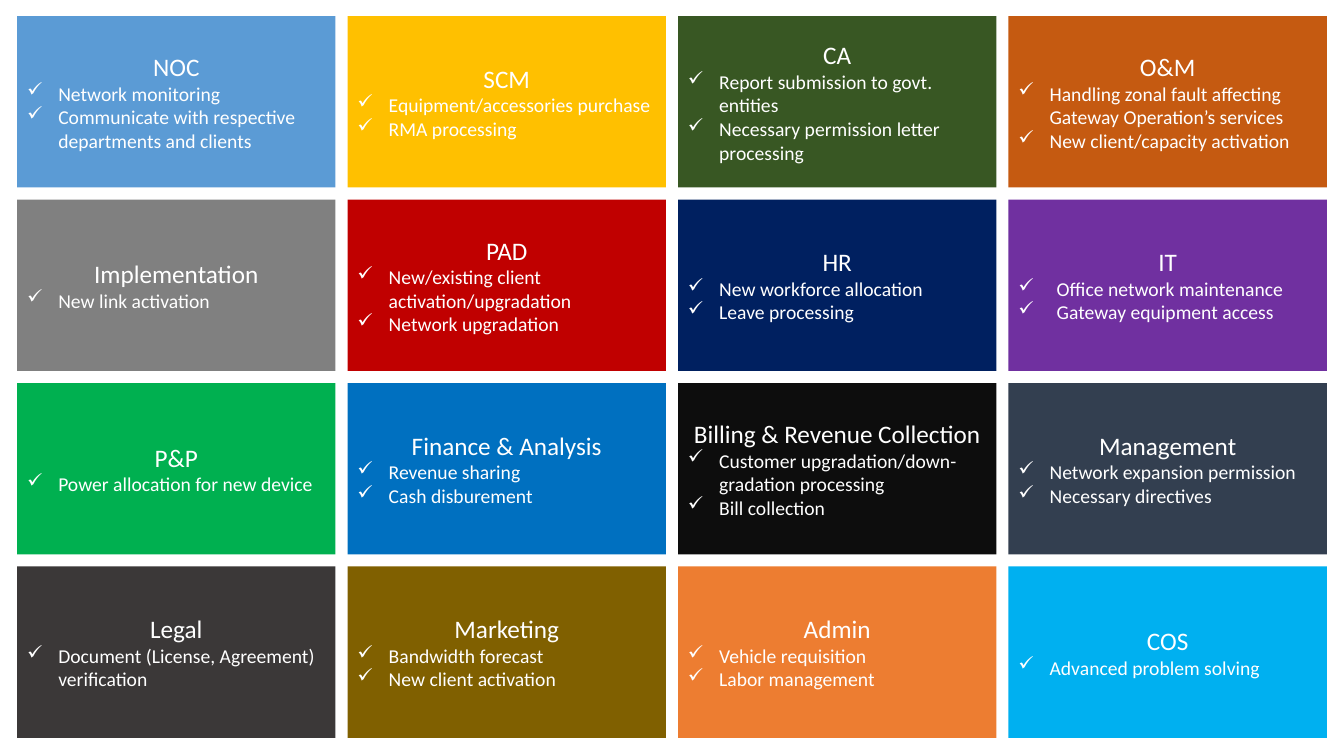
from lxml import etree
from pptx import Presentation
from pptx.dml.color import RGBColor
from pptx.enum.shapes import MSO_SHAPE
from pptx.enum.text import MSO_ANCHOR, PP_ALIGN
from pptx.oxml.ns import qn
from pptx.util import Inches, Pt

FONT = "Calibri"
BULLET_INDENT = 0.31
WIDE_INDENT = 0.38
COLUMNS = 4

WHITE = RGBColor(0xFF, 0xFF, 0xFF)
LIGHT_BLUE = RGBColor(0x5B, 0x9B, 0xD5)
YELLOW = RGBColor(0xFF, 0xC0, 0x00)
DARK_GREEN = RGBColor(0x38, 0x57, 0x23)
RUST = RGBColor(0xC5, 0x5A, 0x11)
GRAY = RGBColor(0x80, 0x80, 0x80)
RED = RGBColor(0xC0, 0x00, 0x00)
NAVY = RGBColor(0x00, 0x20, 0x60)
PURPLE = RGBColor(0x70, 0x30, 0xA0)
GREEN = RGBColor(0x00, 0xB0, 0x50)
BLUE = RGBColor(0x00, 0x70, 0xC0)
BLACK = RGBColor(0x0D, 0x0D, 0x0D)
SLATE = RGBColor(0x33, 0x3F, 0x50)
CHARCOAL = RGBColor(0x3B, 0x38, 0x38)
BROWN = RGBColor(0x80, 0x60, 0x00)
ORANGE = RGBColor(0xED, 0x7D, 0x31)
SKY = RGBColor(0x00, 0xB0, 0xF0)

# Row by row: name, fill, duties, bullet indent
DEPARTMENTS = [
    ("NOC", LIGHT_BLUE, ["Network monitoring",
                         "Communicate with respective departments and clients"], BULLET_INDENT),
    ("SCM", YELLOW, ["Equipment/accessories purchase", "RMA processing"], BULLET_INDENT),
    ("CA", DARK_GREEN, ["Report submission to govt. entities",
                        "Necessary permission letter processing"], BULLET_INDENT),
    ("O&M", RUST, ["Handling zonal fault affecting Gateway Operation’s services",
                   "New client/capacity activation"], BULLET_INDENT),
    ("Implementation", GRAY, ["New link activation"], BULLET_INDENT),
    ("PAD", RED, ["New/existing client activation/upgradation",
                  "Network upgradation"], BULLET_INDENT),
    ("HR", NAVY, ["New workforce allocation", "Leave processing"], BULLET_INDENT),
    ("IT", PURPLE, ["Office network maintenance", "Gateway equipment access"], WIDE_INDENT),
    ("P&P", GREEN, ["Power allocation for new device"], BULLET_INDENT),
    ("Finance & Analysis", BLUE, ["Revenue sharing", "Cash disburement"], BULLET_INDENT),
    ("Billing & Revenue Collection", BLACK, ["Customer upgradation/down-gradation processing",
                                             "Bill collection"], BULLET_INDENT),
    ("Management", SLATE, ["Network expansion permission", "Necessary directives"], BULLET_INDENT),
    ("Legal", CHARCOAL, ["Document (License, Agreement) verification"], BULLET_INDENT),
    ("Marketing", BROWN, ["Bandwidth forecast", "New client activation"], BULLET_INDENT),
    ("Admin", ORANGE, ["Vehicle requisition", "Labor management"], BULLET_INDENT),
    ("COS", SKY, ["Advanced problem solving"], BULLET_INDENT),
]


def add_check_bullet(paragraph, indent):
    properties = paragraph._p.get_or_add_pPr()
    properties.set("marL", str(Inches(indent)))
    properties.set("indent", str(-Inches(indent)))
    etree.SubElement(properties, qn("a:buChar")).set("char", "✓")


def format_text(paragraph, size, alignment):
    paragraph.alignment = alignment
    for run in paragraph.runs:
        run.font.name = FONT
        run.font.size = Pt(size)
        run.font.color.rgb = WHITE


def add_department_tile(slide, left, top, width, height, department):
    name, color, duties, indent = department
    tile = slide.shapes.add_shape(MSO_SHAPE.RECTANGLE, Inches(left), Inches(top),
                                  Inches(width), Inches(height))
    tile.shadow.inherit = False
    tile.fill.solid()
    tile.fill.fore_color.rgb = color
    tile.line.fill.background()
    text_frame = tile.text_frame
    text_frame.word_wrap = True
    text_frame.vertical_anchor = MSO_ANCHOR.MIDDLE
    text_frame.text = name
    format_text(text_frame.paragraphs[0], 18, PP_ALIGN.CENTER)
    for duty in duties:
        paragraph = text_frame.add_paragraph()
        paragraph.text = duty
        format_text(paragraph, 14, PP_ALIGN.LEFT)
        add_check_bullet(paragraph, indent)


def add_department_grid(slide, left, top, width, height, gap):
    rows = len(DEPARTMENTS) // COLUMNS
    tile_width = (width - gap * (COLUMNS - 1)) / COLUMNS
    tile_height = (height - gap * (rows - 1)) / rows
    for index, department in enumerate(DEPARTMENTS):
        row, column = divmod(index, COLUMNS)
        add_department_tile(slide, left + column * (tile_width + gap),
                            top + row * (tile_height + gap),
                            tile_width, tile_height, department)


def main():
    presentation = Presentation()
    presentation.slide_width = Inches(13.33)
    presentation.slide_height = Inches(7.5)
    slide = presentation.slides.add_slide(presentation.slide_layouts[6])
    add_department_grid(slide, left=0.17, top=0.16, width=12.99, height=7.16, gap=0.12)
    presentation.save("out.pptx")


if __name__ == "__main__":
    main()
